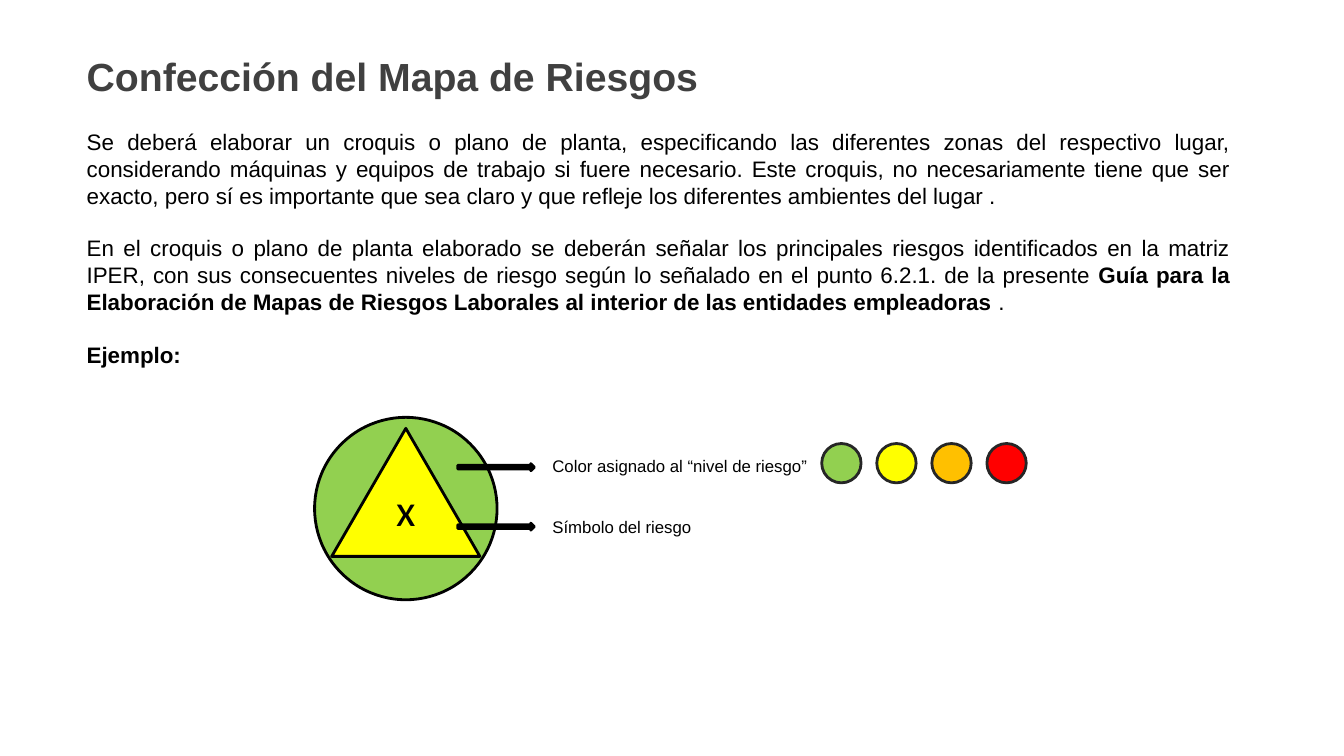
import pptx
import pptx.util
import pptx.dml.color
import pptx.enum.shapes
import pptx.enum.text
from pptx.util import Inches, Pt

HUES = {
    "title": "404040", "black": "000000", "rim": "262626",
    "green": "92D050", "yellow": "FFFF00", "orange": "FFC000", "red": "FF0000",
}
TITLE = [[("Confección del Mapa de Riesgos", True)]]
BODY = [
    [("Se deberá elaborar un croquis o plano de planta, especificando las diferentes "
      "zonas del respectivo lugar, considerando máquinas y equipos de trabajo si fuere "
      "necesario. Este croquis, no necesariamente tiene que ser exacto, pero sí es "
      "importante que sea claro y que refleje los diferentes ambientes del lugar .", False)],
    [("En el croquis o plano de planta elaborado se deberán señalar los principales "
      "riesgos identificados en la matriz IPER, con sus consecuentes niveles de riesgo "
      "según lo señalado en el punto 6.2.1. de la presente ", False),
     ("Guía para la Elaboración de Mapas de Riesgos Laborales al interior de las "
      "entidades empleadoras ", True),
     (".", False)],
    [("Ejemplo:", True)],
]
LABELS = [[("Color asignado al “nivel de riesgo”", False)], [("Símbolo del riesgo", False)]]
MARK = [[("x", False)]]
LEVELS = ["green", "yellow", "orange", "red"]

KIND = pptx.enum.shapes.MSO_SHAPE
ALIGN = pptx.enum.text.PP_ALIGN


def place(shape, left, top, width, height):
    shape.left, shape.top = Inches(left), Inches(top)
    shape.width, shape.height = Inches(width), Inches(height)


def color(name):
    return pptx.dml.color.RGBColor.from_string(HUES[name])


def write(shape, paras, size, hue="black", font="Arial", align=ALIGN.LEFT, gap=0, wrap=True):
    frame = shape.text_frame
    frame.word_wrap = wrap
    frame.auto_size = pptx.enum.text.MSO_AUTO_SIZE.NONE
    frame.vertical_anchor = pptx.enum.text.MSO_ANCHOR.TOP
    for i, runs in enumerate(paras):
        para = frame.paragraphs[0] if i == 0 else frame.add_paragraph()
        para.alignment = align
        para.space_before = Pt(gap if i else 0)
        if shape.is_placeholder:
            props = para._p.get_or_add_pPr()
            props.set("marL", "0")
            props.set("indent", "0")
            props.append(pptx.oxml.parse_xml(
                '<a:buNone xmlns:a="http://schemas.openxmlformats.org/drawingml/2006/main"/>'))
        for text, bold in runs:
            run = para.add_run()
            run.text = text
            run.font.name, run.font.size, run.font.bold = font, Pt(size), bold
            run.font.color.rgb = color(hue)


def draw(shapes, kind, box, fill, line="black"):
    shape = shapes.add_shape(kind, *[Inches(n) for n in box])
    shape.shadow.inherit = False
    shape.fill.solid()
    shape.fill.fore_color.rgb = color(fill)
    shape.line.color.rgb = color(line)
    shape.line.width = Pt(2)


def label(shapes, box, paras, size, **style):
    write(shapes.add_textbox(*[Inches(n) for n in box]), paras, size, **style)


def main():
    deck = pptx.Presentation()
    deck.slide_width, deck.slide_height = Inches(13.33), Inches(7.5)
    slide = deck.slides.add_slide(deck.slide_layouts[1])
    shapes = slide.shapes

    title, body = shapes.title, slide.placeholders[1]
    place(title, 0.76, 0.47, 11.31, 0.57)
    write(title, TITLE, 28, hue="title")
    place(body, 0.76, 1.22, 11.54, 2.59)
    write(body, BODY, 16, align=ALIGN.JUSTIFY, gap=18.5)

    sign = shapes.add_group_shape().shapes
    draw(sign, KIND.OVAL, (3.12, 4.14, 1.81, 1.81), "green")
    draw(sign, KIND.ISOSCELES_TRIANGLE, (3.29, 4.25, 1.47, 1.27), "yellow")
    label(sign, (3.83, 4.73, 0.31, 0.64), MARK, 32, font="Calibri", wrap=False)

    label(shapes, (5.38, 4.47, 4.02, 0.91), LABELS, 12, gap=29.3)
    for top in (4.6, 5.19):
        draw(shapes, KIND.RIGHT_ARROW, (4.54, top, 0.76, 0.07), "black")
    for i, level in enumerate(LEVELS):
        draw(shapes, KIND.OVAL, (8.15 + i * 0.546, 4.4, 0.39, 0.39), level, "rim")

    deck.save("out.pptx")


if __name__ == "__main__":
    main()
